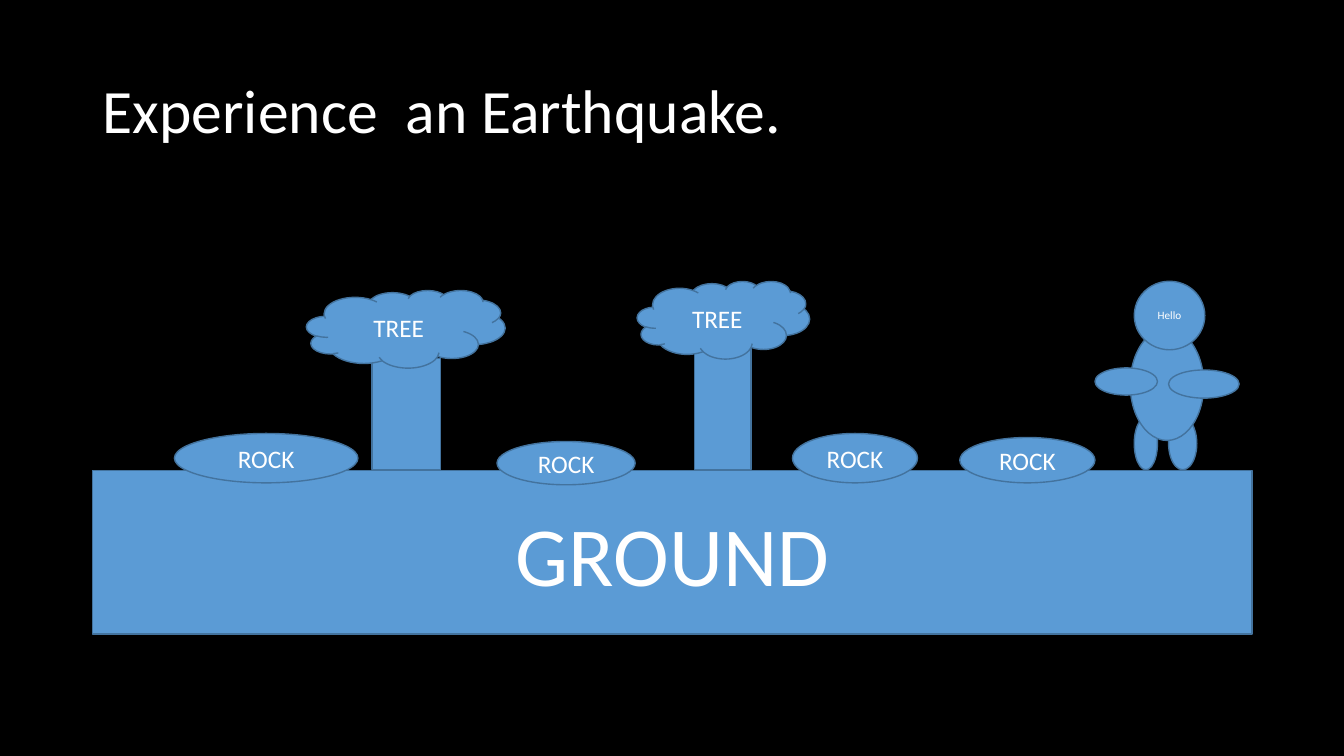
from dataclasses import dataclass

from pptx import Presentation
from pptx.dml.color import RGBColor
from pptx.enum.shapes import MSO_SHAPE
from pptx.enum.text import MSO_ANCHOR, PP_ALIGN
from pptx.util import Pt

RECTANGLE = MSO_SHAPE.RECTANGLE
OVAL = MSO_SHAPE.OVAL
CLOUD = MSO_SHAPE.CLOUD
CONNECTOR = MSO_SHAPE.FLOWCHART_CONNECTOR
MIDDLE = MSO_ANCHOR.MIDDLE
LEFT = PP_ALIGN.LEFT
CENTER = PP_ALIGN.CENTER

EMU_PER_PX = 9144
TITLE_ONLY = 5


@dataclass(frozen=True)
class Theme:
    """Colours, font and type sizes of the slide."""
    font: str = "Calibri"
    background: RGBColor = RGBColor(0, 0, 0)
    text: RGBColor = RGBColor(255, 255, 255)
    fill: RGBColor = RGBColor(0x5B, 0x9B, 0xD5)
    outline: RGBColor = RGBColor(0x43, 0x73, 0x9E)
    outline_width: int = 1
    title_size: int = 44
    ground_size: int = 60
    label_size: int = 18
    speech_size: int = 8


class Scene:
    """Draws the elements of the landscape on one page."""

    def __init__(self, page, theme):
        self.page = page
        self.theme = theme
        page.background.fill.solid()
        page.background.fill.fore_color.rgb = theme.background

    def label(self, shape, text, size, alignment):
        """Put one styled paragraph into a shape."""
        frame = shape.text_frame
        frame.word_wrap = True
        frame.vertical_anchor = MIDDLE
        para = frame.paragraphs[0]
        para.text = text
        para.alignment = alignment
        para.font.name = self.theme.font
        para.font.size = Pt(size)
        para.font.color.rgb = self.theme.text
        return para

    def title(self, text, *bounds):
        """Place and fill the title placeholder."""
        holder = self.page.shapes.title
        holder.left, holder.top, holder.width, holder.height = (
            px * EMU_PER_PX for px in bounds)
        para = self.label(holder, text, self.theme.title_size, LEFT)
        para.line_spacing = 0.9

    def shape(self, kind, bounds, text="", size=None):
        """Draw one outlined shape, with a label where given."""
        shape = self.page.shapes.add_shape(
            kind, *(px * EMU_PER_PX for px in bounds))
        shape.shadow.inherit = False
        shape.fill.solid()
        shape.fill.fore_color.rgb = self.theme.fill
        shape.line.color.rgb = self.theme.outline
        shape.line.width = Pt(self.theme.outline_width)
        if text:
            self.label(shape, text, size or self.theme.label_size, CENTER)

    def rock(self, *bounds):
        """Draw a labelled rock."""
        self.shape(OVAL, bounds, "ROCK")

    def tree(self, trunk, crown):
        """Draw a trunk with a labelled crown over it."""
        self.shape(RECTANGLE, trunk)
        self.shape(CLOUD, crown, "TREE")

    def person(self, limbs, head, speech):
        """Draw legs, body and arms, then the speaking head."""
        for bounds in limbs:
            self.shape(OVAL, bounds)
        self.shape(CONNECTOR, head, speech, self.theme.speech_size)


def main():
    """Build and save the slide."""
    deck = Presentation()
    deck.slide_width = 1333 * EMU_PER_PX
    deck.slide_height = 750 * EMU_PER_PX
    theme = Theme()
    scene = Scene(deck.slides.add_slide(deck.slide_layouts[TITLE_ONLY]), theme)

    scene.title("Experience  an Earthquake.", 92, 40, 1150, 145)
    scene.shape(RECTANGLE, (92, 467, 1150, 162), "GROUND", theme.ground_size)
    scene.rock(173, 430, 182, 49)
    scene.tree(trunk=(369, 356, 68, 110), crown=(304, 288, 197, 77))
    scene.rock(493, 438, 137, 43)
    scene.tree(trunk=(689, 346, 56, 120), crown=(632, 279, 171, 77))
    scene.rock(786, 430, 124, 49)
    scene.rock(952, 434, 134, 45)

    left_leg, right_leg = (1125, 414, 23, 52), (1159, 414, 28, 52)
    body = (1121, 326, 73, 111)
    left_arm, right_arm = (1086, 365, 62, 27), (1159, 367, 70, 28)
    scene.person((left_leg, right_leg, body, left_arm, right_arm),
                 head=(1125, 279, 70, 68), speech="Hello")

    deck.save("out.pptx")


if __name__ == "__main__":
    main()
